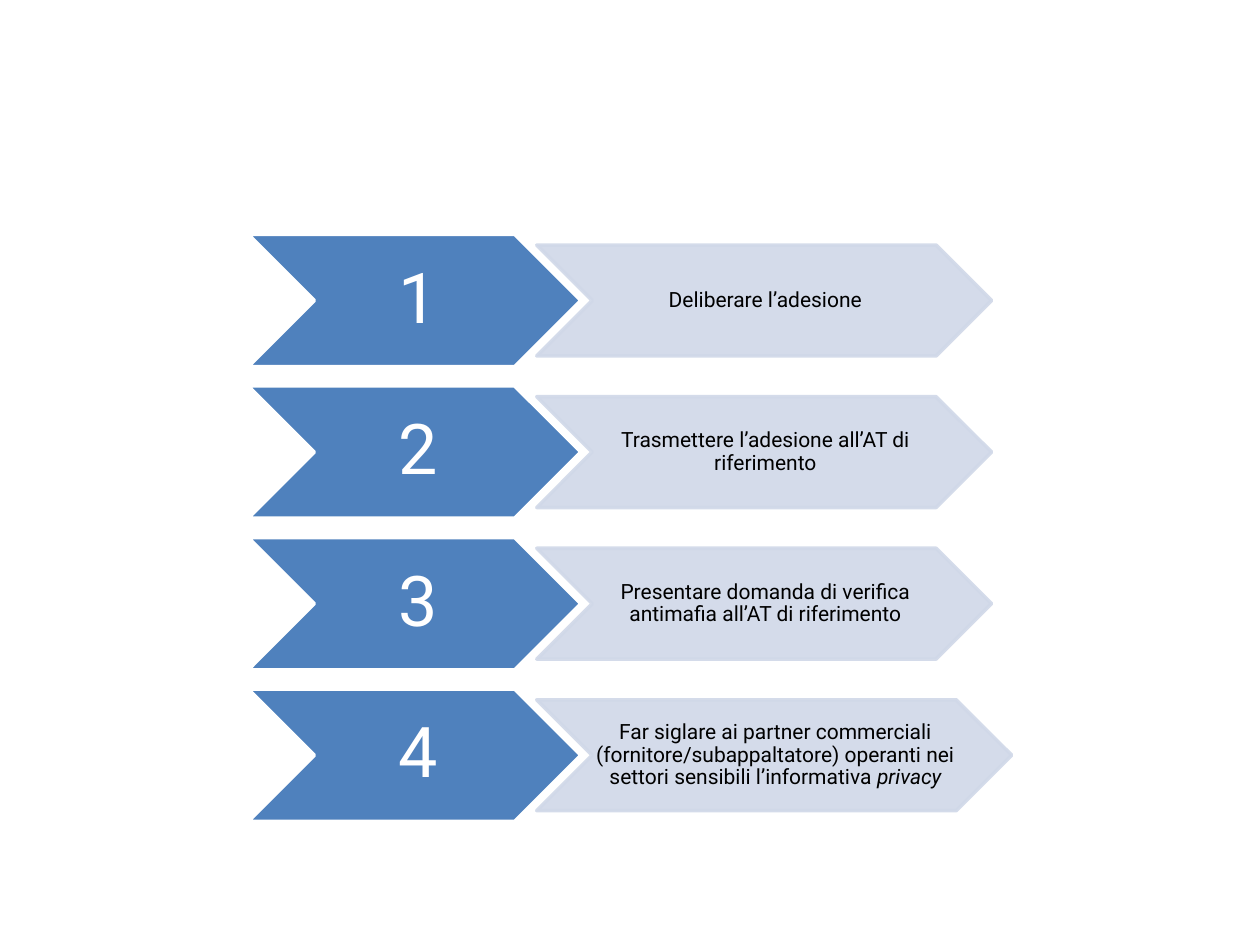
"""Build a slide with four numbered steps, each a pair of chevrons."""
from lxml.etree import SubElement
from pptx import Presentation
from pptx.dml.color import RGBColor
from pptx.enum.shapes import MSO_SHAPE
from pptx.enum.text import MSO_ANCHOR, PP_ALIGN
from pptx.oxml.ns import qn
from pptx.util import Inches, Pt

COLORS = {"blue": "4F81BD", "pale": "D0D8E8", "white": "FFFFFF", "black": "000000"}
FONT = "Roboto"
STEPS = [
    {"text": "Deliberare l’adesione", "width": 3.61},
    {"text": "Trasmettere l’adesione all’AT di riferimento", "width": 3.61},
    {"text": "Presentare domanda di verifica antimafia all’AT di riferimento", "width": 3.61},
    {
        "text": "Far siglare ai partner commerciali (fornitore/subappaltatore) "
                "operanti nei settori sensibili l’informativa ",
        "italic": "privacy",
        "width": 3.77,
    },
]
TOP, PITCH = 1.86, 1.203
NUMBER = {"left": 1.97, "width": 2.64, "height": 1.05}
ACTION = {"left": 4.26, "height": 0.88}


def rgb(name):
    return RGBColor.from_string(COLORS[name])


def set_alpha(fill, percent):
    color = fill._xPr.find(qn("a:solidFill"))[0]
    SubElement(color, qn("a:alpha"), val=str(percent * 1000))


def add_chevron(page, left, center, width, height, fill, line, alpha=None):
    chevron = page.shapes.add_shape(
        MSO_SHAPE.CHEVRON, Inches(left), Inches(center - height / 2),
        Inches(width), Inches(height))
    chevron.shadow.inherit = False
    chevron.fill.solid()
    chevron.fill.fore_color.rgb = rgb(fill)
    chevron.line.width = Pt(2)
    chevron.line.color.rgb = rgb(line)
    if alpha:
        set_alpha(chevron.fill, alpha)
        set_alpha(chevron.line.fill, alpha)
    return chevron


def write(chevron, text, size, color, left_inset, edge_inset, italic=None):
    frame = chevron.text_frame
    frame.word_wrap = True
    frame.vertical_anchor = MSO_ANCHOR.MIDDLE
    frame.margin_left, frame.margin_right = Inches(left_inset), 0
    frame.margin_top = frame.margin_bottom = Inches(edge_inset)
    para = frame.paragraphs[0]
    para.alignment = PP_ALIGN.CENTER
    para.line_spacing = 0.9
    para.font.name = FONT
    para.font.size = Pt(size)
    para.font.color.rgb = rgb(color)
    para.add_run().text = text
    if italic:
        span = para.add_run()
        span.text = italic
        span.font.italic = True


def main():
    deck = Presentation()
    deck.slide_width, deck.slide_height = Inches(10), Inches(7.5)
    page = deck.slides.add_slide(deck.slide_layouts[6])
    for index, step in enumerate(STEPS):
        center = TOP + index * PITCH + NUMBER["height"] / 2
        number = add_chevron(page, center=center, fill="blue", line="white", **NUMBER)
        write(number, str(index + 1), 40, "white", 0.06, 0.03)
        action = add_chevron(page, center=center, width=step["width"],
                             fill="pale", line="pale", alpha=90, **ACTION)
        write(action, step["text"], 12, "black", 0.02, 0.01, step.get("italic"))
    deck.save("out.pptx")


if __name__ == "__main__":
    main()
